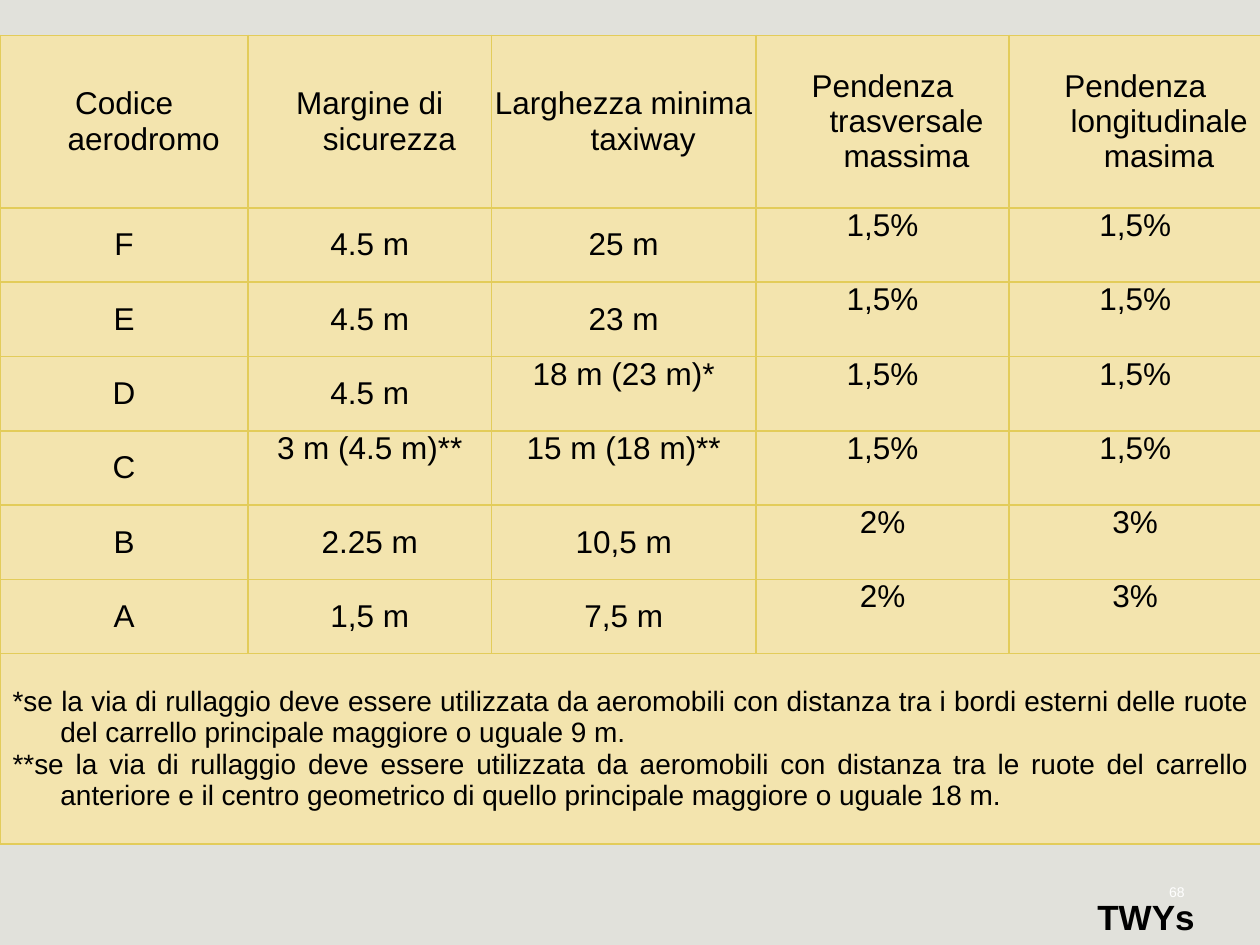
from pptx import Presentation
from pptx import util as u
from pptx.dml import color
from pptx.enum import text
from pptx.oxml import ns, parse_xml

INK, CREAM, GOLD, GREY, WHITE = "000000", "F3E4AE", "E3CC5A", "E1E1DB", "FFFFFF"

COLUMN_WIDTHS = [1.97, 1.93, 2.1, 2.01, 2]
ROW_HEIGHTS = [1.37] + [0.59] * 6 + [1.51]
HANGING = 0.38

TAXIWAY_ROWS = [
    ["Codice aerodromo ", "Margine di sicurezza ", "Larghezza minima taxiway ",
     "Pendenza trasversale massima", "Pendenza longitudinale masima"],
    ["F", "4.5 m", "25 m", "1,5%", "1,5%"],
    ["E", "4.5 m", "23 m", "1,5%", "1,5%"],
    ["D", "4.5 m", "18 m (23 m)*", "1,5%", "1,5%"],
    ["C", "3 m (4.5 m)**", "15 m (18 m)**", "1,5%", "1,5%"],
    ["B", "2.25 m", "10,5 m", "2%", "3%"],
    ["A", "1,5 m", "7,5 m", "2%", "3%"],
]
FOOTNOTES = [
    "*se la via di rullaggio deve essere utilizzata da aeromobili con distanza tra "
    "i bordi esterni delle ruote del carrello principale maggiore o uguale 9 m. ",
    "**se la via di rullaggio deve essere utilizzata da aeromobili con distanza tra "
    "le ruote del carrello anteriore e il centro geometrico di quello principale "
    "maggiore o uguale 18 m.",
]


def rgb(hex_code):
    return color.RGBColor.from_string(hex_code)


class SlideBuilder:
    font = "Arial"

    def __init__(self, slide):
        self.slide = slide

    def background(self, hex_code):
        fill = self.slide.background.fill
        fill.solid()
        fill.fore_color.rgb = rgb(hex_code)

    def paragraphs(self, frame, lines, align, size, hex_code=INK, bold=False, hanging=0):
        for index, line in enumerate(lines):
            paragraph = frame.add_paragraph() if index else frame.paragraphs[0]
            paragraph.alignment = align
            if hanging:
                properties = paragraph._p.get_or_add_pPr()
                properties.set("marL", str(u.Inches(hanging)))
                properties.set("indent", str(-u.Inches(hanging)))
            run = paragraph.add_run()
            run.text = line
            formats = {"name": self.font, "size": u.Pt(size), "bold": bold}
            for key, value in formats.items():
                setattr(run.font, key, value)
            run.font.color.rgb = rgb(hex_code)

    def label(self, wording, box, **style):
        frame = self.slide.shapes.add_textbox(*map(u.Inches, box)).text_frame
        frame.word_wrap = True
        self.paragraphs(frame, [wording], text.PP_ALIGN.CENTER, **style)

    def table(self, left, top, widths, heights):
        """Add an empty table with bordered, filled cells."""
        frame = self.slide.shapes.add_table(
            len(heights), len(widths), *map(u.Inches, (left, top, sum(widths), sum(heights))))
        grid = frame.table
        grid.first_row = grid.horz_banding = False
        for column, width in zip(grid.columns, widths):
            column.width = u.Inches(width)
        for row, height in zip(grid.rows, heights):
            row.height = u.Inches(height)
        for cell in grid.iter_cells():
            self.border(cell, GOLD, 1)
            cell.fill.solid()
            cell.fill.fore_color.rgb = rgb(CREAM)
        return grid

    def border(self, cell, hex_code, points):
        properties = cell._tc.get_or_add_tcPr()
        for side in ("lnL", "lnR", "lnT", "lnB"):
            properties.append(parse_xml(
                f'<a:{side} {ns.nsdecls("a")} w="{u.Pt(points)}"><a:solidFill>'
                f'<a:srgbClr val="{hex_code}"/></a:solidFill></a:{side}>'))

    def cell(self, cell, wording, anchor):
        margins = dict.fromkeys(
            ("margin_left", "margin_right", "margin_top", "margin_bottom"), 0)
        for key, value in {**margins, "vertical_anchor": anchor}.items():
            setattr(cell, key, value)
        self.paragraphs(cell.text_frame, [wording], text.PP_ALIGN.CENTER, 18, hanging=HANGING)


def main():
    deck = Presentation()
    deck.slide_width, deck.slide_height = u.Inches(10), u.Inches(7.5)
    builder = SlideBuilder(deck.slides.add_slide(deck.slide_layouts[6]))
    builder.background(GREY)

    taxiways = builder.table(0, 0.28, COLUMN_WIDTHS, ROW_HEIGHTS)
    for r, values in enumerate(TAXIWAY_ROWS):
        for c, value in enumerate(values):
            at_top = r > 0 and (c > 2 or "(" in value)
            anchor = text.MSO_ANCHOR.TOP if at_top else text.MSO_ANCHOR.MIDDLE
            builder.cell(taxiways.cell(r, c), value, anchor)

    last = len(ROW_HEIGHTS) - 1
    notes = taxiways.cell(last, 0)
    notes.merge(taxiways.cell(last, len(COLUMN_WIDTHS) - 1))
    notes.vertical_anchor = text.MSO_ANCHOR.MIDDLE
    builder.paragraphs(notes.text_frame, FOOTNOTES, text.PP_ALIGN.JUSTIFY, 16, hanging=HANGING)

    builder.label("68", (9.08, 6.96, 0.52, 0.25), size=8, hex_code=WHITE)
    builder.label("TWYs", (8.15, 7.06, 1.89, 0.43), size=20, bold=True)
    deck.save("out.pptx")


if __name__ == "__main__":
    main()
